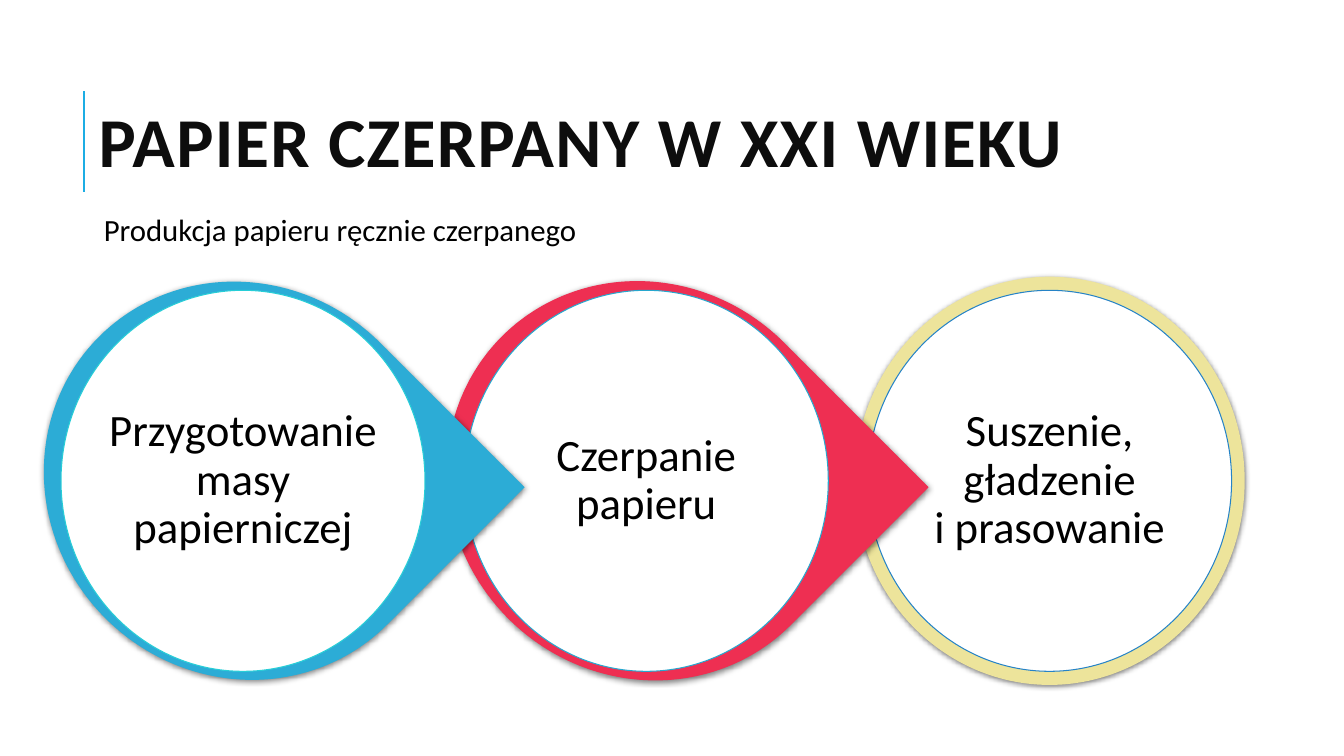
from dataclasses import dataclass

from lxml.etree import SubElement
from pptx import Presentation
from pptx.dml.color import RGBColor as RGB
from pptx.enum.shapes import MSO_CONNECTOR as LINE, MSO_SHAPE as SHAPE
from pptx.enum.text import MSO_ANCHOR as ANCHOR, PP_ALIGN as ALIGN
from pptx.oxml.ns import qn
from pptx.util import Inches, Pt


@dataclass(frozen=True)
class Theme:
    """Colours, font and type sizes of the slide."""
    font: str = "Calibri"
    title_size: int = 50
    step_size: int = 32
    body_size: int = 22
    title: str = "0D0D0D"
    text: str = "000000"
    white: str = "FFFFFF"
    accent: str = "1CADE4"
    blue: str = "2CACD6"
    red: str = "EE2F52"
    sand: str = "EDE49B"
    rims: tuple = ("27CED7", "27A7CE", "2683C6")


def write(tf, text, *, font, size, color, bold=False, spacing=None,
          align=ALIGN.LEFT, anchor=ANCHOR.TOP, leading=0.9, insets=(0.1, 0.05)):
    """Put one formatted paragraph into a text frame."""
    tf.word_wrap = True
    tf.vertical_anchor = anchor
    tf.margin_left = tf.margin_right = Inches(insets[0])
    tf.margin_top = tf.margin_bottom = Inches(insets[1])
    p = tf.paragraphs[0]
    p.alignment = align
    p.line_spacing = leading
    r = p.add_run()
    r.text = text
    r.font.name = font
    r.font.size = Pt(size)
    r.font.bold = bold
    r.font.color.rgb = RGB.from_string(color)
    if spacing:
        r.font._element.set("spc", str(spacing * 100))


def round_off(sp):
    """Turn the four sides of a diamond outline into quarter arcs."""
    kappa = 0.5523
    centre = sp.width / 2, sp.height / 2
    outline = sp._element.spPr.find(".//" + qn("a:path"))
    pts = [(int(pt.get("x")), int(pt.get("y")))
           for pt in outline.iter(qn("a:pt"))]
    for side, a, b in zip(outline.findall(qn("a:lnTo")), pts, pts[1:]):
        corner = [m + n - c for m, n, c in zip(a, b, centre)]
        handles = [[round(m + kappa * (k - m)) for m, k in zip(end, corner)]
                   for end in (a, b)]
        side.tag = qn("a:cubicBezTo")
        side.remove(side[0])
        for x, y in (*handles, b):
            SubElement(side, qn("a:pt"), x=str(x), y=str(y))


class Deck:
    """Draws styled elements on the current slide."""

    def __init__(self, prs, theme):
        """Add a blank slide to draw on."""
        self.theme = theme
        self.s = prs.slides.add_slide(prs.slide_layouts[6])

    def rule(self, x, top, bottom):
        """Draw the vertical accent line."""
        c = self.s.shapes.add_connector(
            LINE.STRAIGHT, Inches(x), Inches(bottom), Inches(x), Inches(top))
        c.line.color.rgb = RGB.from_string(self.theme.accent)
        c.line.width = Pt(1.5)
        SubElement(c._element.spPr, qn("a:effectLst"))

    def text(self, box, text, **fmt):
        """Add a text box."""
        sp = self.s.shapes.add_textbox(*map(Inches, box))
        write(sp.text_frame, text, font=self.theme.font, **fmt)

    def paint(self, sp, fill, line=None):
        """Set fill and outline and remove the inherited shadow."""
        sp.shadow.inherit = False
        sp.fill.solid()
        sp.fill.fore_color.rgb = RGB.from_string(fill)
        if line:
            sp.line.color.rgb = RGB.from_string(line)
            sp.line.width = Pt(0.75)
        else:
            sp.line.fill.background()

    def backdrop(self, kind, box, fill, line=None, rotation=0):
        """Add a coloured shape with a soft shadow."""
        sp = self.s.shapes.add_shape(kind, *map(Inches, box))
        sp.rotation = rotation
        self.paint(sp, fill, line)
        effects = sp._element.spPr.find(qn("a:effectLst"))
        shadow = SubElement(effects, qn("a:outerShdw"), blurRad=str(Pt(4)),
                            dist=str(Pt(1)), dir="5400000", rotWithShape="0")
        color = SubElement(shadow, qn("a:srgbClr"), val=self.theme.text)
        SubElement(color, qn("a:alpha"), val="50000")

    def disc(self, cx, cy, width, height, text, rim):
        """Add a white disc whose text uses its full width."""
        rx, ry = width / 2, height / 2
        pts = [(Inches(cx + dx), Inches(cy + dy)) for dx, dy in
               ((-rx, 0), (0, -ry), (rx, 0), (0, ry), (-rx, 0))]
        fb = self.s.shapes.build_freeform(*pts[0])
        fb.add_line_segments(pts[1:], close=True)
        sp = fb.convert_to_shape()
        round_off(sp)
        self.paint(sp, self.theme.white, rim)
        write(sp.text_frame, text, font=self.theme.font,
              size=self.theme.step_size, color=self.theme.text,
              align=ALIGN.CENTER, anchor=ANCHOR.MIDDLE, insets=(0.37, 0.37))


def main():
    """Build and save the slide."""
    prs = Presentation()
    prs.slide_width, prs.slide_height = Inches(13.33), Inches(7.5)
    theme = Theme()
    deck = Deck(prs, theme)
    deck.rule(0.83, 0.9, 1.9)
    deck.text((0.88, 0.64, 10.63, 1.64), "PAPIER CZERPANY W XXI WIEKU",
              size=theme.title_size, color=theme.title, bold=True, spacing=1,
              anchor=ANCHOR.MIDDLE, leading=0.8)
    deck.text((0.88, 2.08, 10.63, 0.53), "Produkcja papieru ręcznie czerpanego",
              size=theme.body_size, color=theme.text, insets=(0.15, 0.05))

    drop, ring = (SHAPE.TEAR, 4.04, 3.86, 45), (SHAPE.OVAL, 3.87, 4.05, 0)
    steps = [
        ("Przygotowanie masy papierniczej", drop, theme.blue, None),
        ("Czerpanie papieru", drop, theme.red, theme.red),
        ("Suszenie, gładzenie i\u00a0prasowanie", ring, theme.sand, None),
    ]
    for i, (text, (kind, w, h, rotation), fill, line) in reversed(
            list(enumerate(steps))):
        cx, cy = 2.41 + 4 * i, 4.77
        deck.backdrop(kind, (cx - w / 2, cy - h / 2, w, h), fill, line, rotation)
        deck.disc(cx, cy, 3.61, 3.78, text, theme.rims[i])
    prs.save("out.pptx")


if __name__ == "__main__":
    main()
